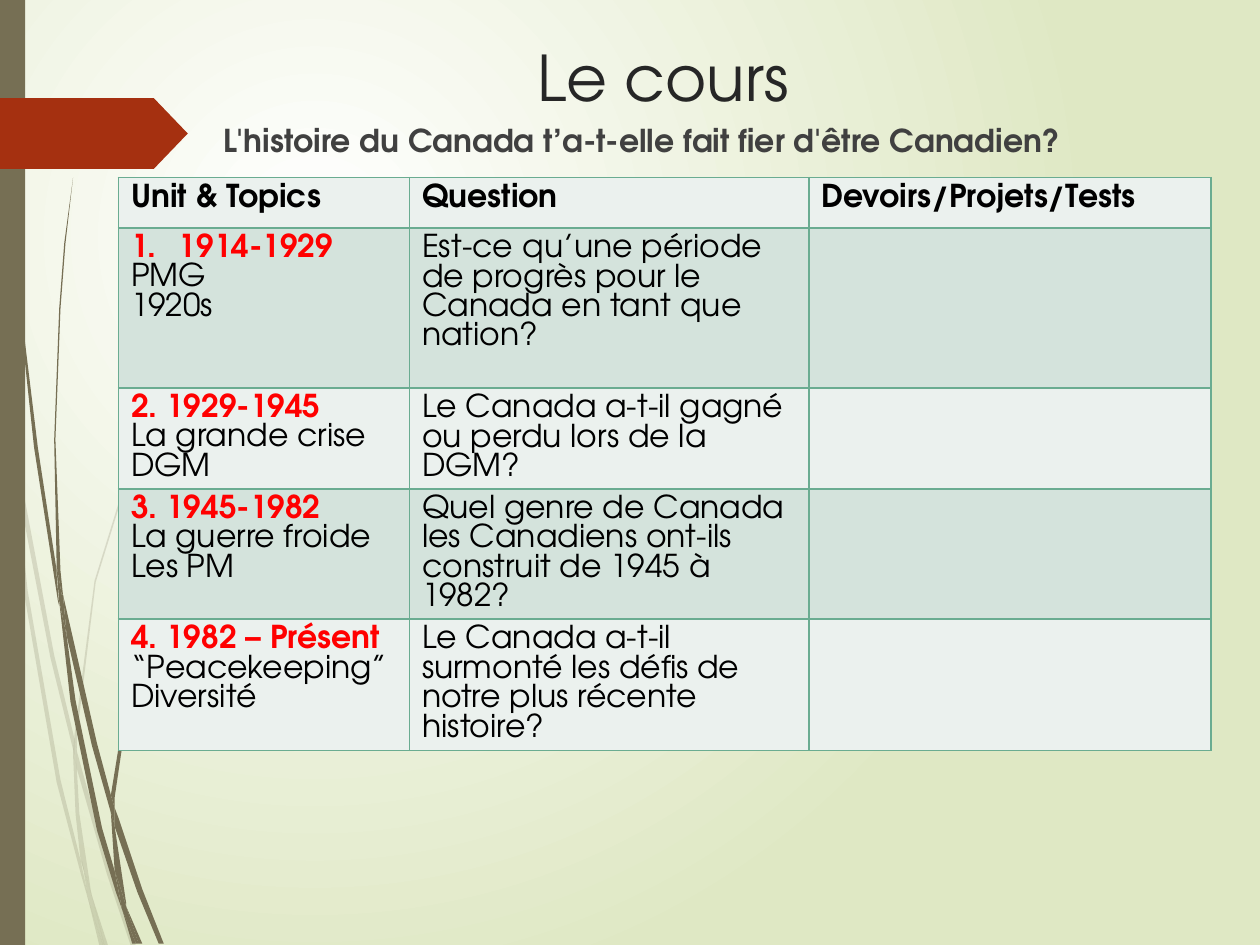
from lxml import etree
from pptx import Presentation, util as u
from pptx.dml.color import RGBColor
from pptx.enum import shapes, text
from pptx.oxml.ns import qn

PX = 9144  # EMU in one px: the page is 1000 x 750 px
FONT = "TeX Gyre Adventor"
WHITE = RGBColor(0xFF, 0xFF, 0xFF)
LIME = RGBColor(0xDF, 0xE8, 0xC4)
OLIVE = RGBColor(0x76, 0x6F, 0x54)
RUST = RGBColor(0xA5, 0x30, 0x10)
TITLE_INK = RGBColor(0x26, 0x26, 0x26)
BODY_INK = RGBColor(0x40, 0x40, 0x40)
BLACK = RGBColor(0, 0, 0)
RED = RGBColor(0xFF, 0, 0)
PALE = RGBColor(0xEB, 0xF1, 0xEE)
SAGE = RGBColor(0xD4, 0xE3, 0xDC)
BORDER = RGBColor(0x6A, 0xAC, 0x91)

PALE_WISPS = [
    [(8, 350), (6, 322), (0, 282), (0, 299), (7, 344)],
    [(40, 522), (59, 599), (59, 586), (43, 520), (10, 345), (12, 376)],
    [(64, 607), (61, 596), (61, 610), (85, 694), (104, 751), (108, 751), (88, 692)],
    [(83, 751), (86, 751), (73, 711)],
    [(64, 683), (48, 619), (22, 469), (12, 376), (8, 350), (19, 470), (45, 621), (64, 693), (70, 714), (69, 707)],
    [(58, 599), (60, 646), (64, 683), (67, 692), (73, 711), (72, 706), (63, 646), (61, 610), (61, 608)],
    [(61, 584), (76, 462), (111, 349), (159, 245), (187, 198), (201, 175), (217, 154), (217, 153),
     (201, 175), (186, 197), (158, 244), (110, 348), (75, 461), (59, 584), (59, 586), (61, 596)],
    [(70, 714), (79, 751), (82, 751)],
    [(61, 608), (61, 610), (61, 596), (59, 586), (58, 599)],
    [(67, 692), (65, 683), (69, 707), (70, 714), (82, 751), (83, 751), (73, 711)],
]
DARK_WISPS = [
    [(5, 110), (14, 233), (27, 355), (46, 477), (47, 481), (45, 457), (45, 453),
     (30, 355), (15, 232), (6, 109), (4, 48), (3, 0), (2, 0), (3, 48)],
    [(73, 592), (88, 645), (88, 633), (88, 631), (77, 590), (50, 472), (53, 505)],
    [(94, 649), (91, 641), (91, 656), (109, 708), (126, 749), (130, 749), (113, 706)],
    [(91, 691), (81, 657), (60, 556), (53, 505), (47, 477), (56, 557), (77, 659), (92, 708), (97, 722), (96, 717)],
    [(50, 472), (48, 453), (44, 349), (48, 245), (52, 193), (58, 141), (51, 193),
     (47, 245), (43, 349), (45, 449), (49, 472)],
    [(110, 749), (113, 749), (100, 719)],
    [(47, 477), (53, 505), (50, 472), (49, 472), (45, 449), (45, 453)],
    [(91, 633), (103, 552), (131, 476), (169, 406), (191, 374), (203, 359), (216, 344), (215, 344),
     (203, 358), (191, 373), (168, 405), (129, 474), (101, 551), (88, 631), (91, 641)],
    [(97, 722), (105, 749), (108, 749)],
    [(88, 645), (91, 691), (96, 706), (100, 719), (100, 716), (91, 656), (90, 651)],
    [(88, 645), (90, 651), (91, 656), (91, 641), (88, 631), (88, 633)],
    [(96, 706), (91, 691), (96, 717), (97, 722), (108, 749), (110, 749), (100, 719)],
]

COLUMNS = [231, 317, 319]
ROW_HEIGHTS = [40, 127, 80, 103, 104]
HEADINGS = ["Unit & Topics", "Question", "Devoirs/Projets/Tests"]
UNITS = [
    (["1914-1929", "PMG", "1920s"],
     "Est-ce qu’une période de progrès pour le Canada en tant que nation?"),
    (["2. 1929-1945", "La grande crise", "DGM"],
     "Le Canada a-t-il gagné ou perdu lors de la DGM?"),
    (["3. 1945-1982", "La guerre froide", "Les PM"],
     "Quel genre de Canada les Canadiens ont-ils construit de 1945 à 1982?"),
    (["4. 1982 – Présent", "“Peacekeeping”", "Diversité"],
     "Le Canada a-t-il surmonté les défis de notre plus récente histoire?"),
]


def set_all(thing, values):
    for name, value in values.items():
        setattr(thing, name, value)


def write(para, words, size, color, bold=False):
    span = para.add_run()
    span.text = words
    set_all(span.font, {"name": FONT, "size": u.Pt(size), "bold": bold})
    span.font.color.rgb = color


def paint(shape, color, opacity=100):
    shape.shadow.inherit = False
    shape.fill.solid()
    shape.fill.fore_color.rgb = color
    shape.line.fill.background()
    if opacity < 100:
        tint = shape.fill._xPr.find(".//" + qn("a:srgbClr"))
        etree.SubElement(tint, qn("a:alpha"), val=str(opacity * 1000))


def add_block(page, kind, place, color):
    box = page.shapes.add_shape(kind, *(n * PX for n in place))
    paint(box, color)
    return box


def add_wisps(page, outlines, opacity):
    for first, *rest in outlines:
        builder = page.shapes.build_freeform(*first, scale=PX)
        builder.add_line_segments(rest, close=True)
        paint(builder.convert_to_shape(), OLIVE, opacity)


def set_background(page):
    """Radial gradient centred in the upper left quarter."""
    fill = page.background.fill
    fill.gradient()
    for stop, color in zip(fill.gradient_stops, (WHITE, LIME)):
        stop.color.rgb = color
    linear = fill._fill._gradFill.find(qn("a:lin"))
    radial = etree.Element(qn("a:path"), path="circle")
    etree.SubElement(radial, qn("a:fillToRect"), l="50000", t="50000", r="100000", b="100000")
    linear.getparent().replace(linear, radial)


def fill_placeholder(box, place, words, size, color, bold, anchor, align):
    set_all(box, dict(zip(("left", "top", "width", "height"), (n * PX for n in place))))
    set_all(box.text_frame, {"word_wrap": True, "vertical_anchor": anchor,
                             "auto_size": text.MSO_AUTO_SIZE.NONE})
    para = box.text_frame.paragraphs[0]
    para.alignment = align
    write(para, words, size, color, bold)
    return para


def set_bullet(para, tag, indent=0, **options):
    props = para._p.get_or_add_pPr()
    props.set("marL", str(indent * PX))
    props.set("indent", str(-indent * PX))
    etree.SubElement(props, qn(tag), **options)


def add_borders(cell):
    props = cell._tc.get_or_add_tcPr()
    for place, side in enumerate(("lnL", "lnR", "lnT", "lnB")):
        line = etree.Element(qn("a:" + side), w=str(u.Pt(1)))
        solid = etree.SubElement(line, qn("a:solidFill"))
        etree.SubElement(solid, qn("a:srgbClr"), val=str(BORDER))
        props.insert(place, line)


def fill_cell(cell, lines, color, styles):
    """Write one paragraph per line; styles gives (ink, bold) for each."""
    cell.fill.solid()
    cell.fill.fore_color.rgb = color
    add_borders(cell)
    frame = cell.text_frame
    for number, (words, (ink, bold)) in enumerate(zip(lines, styles)):
        para = frame.add_paragraph() if number else frame.paragraphs[0]
        write(para, words, 18, ink, bold)


def add_units_table(page):
    frame = page.shapes.add_table(len(UNITS) + 1, len(COLUMNS), 94 * PX, 141 * PX,
                                  sum(COLUMNS) * PX, sum(ROW_HEIGHTS) * PX)
    table = frame.table
    set_all(table, {"first_row": False, "horz_banding": False})
    for column, width in zip(table.columns, COLUMNS):
        column.width = width * PX
    for row, height in zip(table.rows, ROW_HEIGHTS):
        row.height = height * PX
    for cell, heading in zip(table.rows[0].cells, HEADINGS):
        fill_cell(cell, [heading], PALE, [(BLACK, True)])
    plain = (BLACK, False)
    styles = ([(RED, True), plain, plain], [plain], [])
    for number, (topics, question) in enumerate(UNITS, 1):
        color = SAGE if number % 2 else PALE
        for cell, lines, looks in zip(table.rows[number].cells, (topics, [question], []), styles):
            fill_cell(cell, lines, color, looks)
    set_bullet(table.cell(1, 0).text_frame.paragraphs[0], "a:buAutoNum", 38, type="arabicPeriod")


def main():
    deck = Presentation()
    set_all(deck, {"slide_width": 1000 * PX, "slide_height": 750 * PX})
    page = deck.slides.add_slide(deck.slide_layouts[1])
    set_background(page)
    add_wisps(page, PALE_WISPS, 20)
    add_wisps(page, DARK_WISPS, 100)
    add_block(page, shapes.MSO_SHAPE.RECTANGLE, (0, 0, 20, 750), OLIVE)
    arrow = add_block(page, shapes.MSO_SHAPE.PENTAGON, (0, 78, 149, 56), RUST)
    arrow.adjustments[0] = 0.48
    title, body = page.placeholders
    fill_placeholder(title, (333, 24, 387, 73), "Le cours", 36, TITLE_INK, False,
                     text.MSO_ANCHOR.MIDDLE, text.PP_ALIGN.CENTER)
    question = fill_placeholder(
        body, (167, 91, 875, 50), "L'histoire du Canada t’a-t-elle fait fier d'être Canadien?",
        18, BODY_INK, True, text.MSO_ANCHOR.TOP, text.PP_ALIGN.LEFT)
    question.space_before = u.Pt(10)
    set_bullet(question, "a:buNone")
    add_units_table(page)
    deck.save("out.pptx")


if __name__ == "__main__":
    main()
